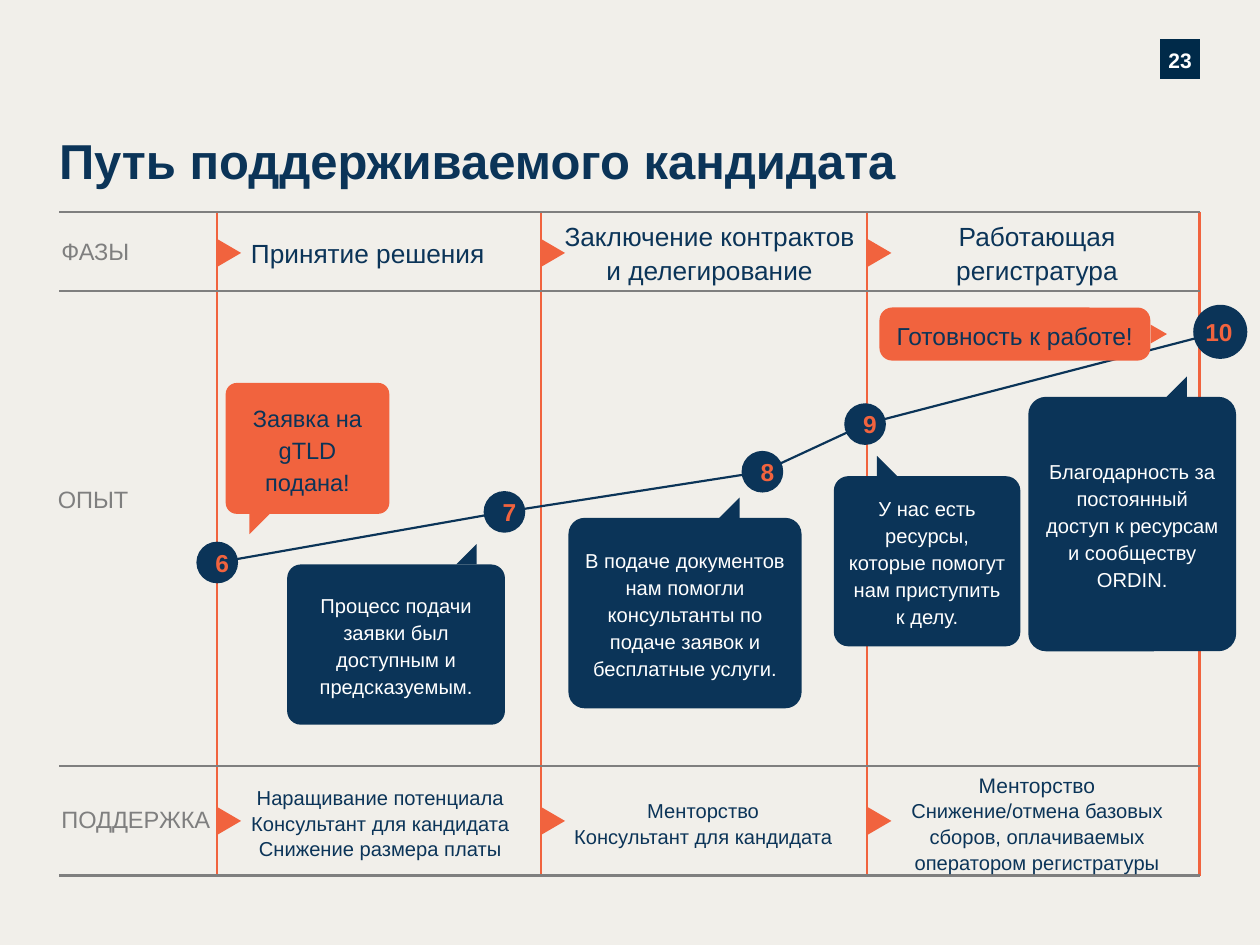
from itertools import pairwise

from lxml import etree
from pptx import Presentation
from pptx.dml.color import RGBColor
from pptx.enum.shapes import MSO_CONNECTOR, MSO_SHAPE
from pptx.enum.text import MSO_ANCHOR, MSO_AUTO_SIZE, PP_ALIGN
from pptx.oxml.ns import qn
from pptx.util import Cm, Pt

LINE = MSO_CONNECTOR.STRAIGHT
RECT, ROUND, OVAL = MSO_SHAPE.RECTANGLE, MSO_SHAPE.ROUNDED_RECTANGLE, MSO_SHAPE.OVAL
TRIANGLE, CORNER = MSO_SHAPE.ISOSCELES_TRIANGLE, MSO_SHAPE.RIGHT_TRIANGLE
TOP, MIDDLE = MSO_ANCHOR.TOP, MSO_ANCHOR.MIDDLE
LEFT, CENTER = PP_ALIGN.LEFT, PP_ALIGN.CENTER

COLORS = {"bg": "F1EFEA", "navy": "0B3458", "dark": "002A49", "orange": "F1633E",
          "gray": "7F7F7F", "white": "FFFFFF"}

TITLE = "Путь поддерживаемого кандидата"
PAGE = "23"
COLUMNS = [4.37, 10.9, 17.48, 24.18]
ROWS = [4.27, 5.87, 15.44, 17.65]
GRID_LEFT, GRID_RIGHT = 1.19, 24.2
ARROW_ROWS = [5.1, 16.55]

ROW_LABELS = [("ФАЗЫ", 1.24, 4.78), ("ОПЫТ", 1.17, 9.78), ("ПОДДЕРЖКА", 1.24, 16.23)]
PHASES = [("Принятие решения", 4.34),
          ("Заключение контрактов и делегирование", 11.23),
          ("Работающая регистратура", 17.83)]
SUPPORT = [
    (["Наращивание потенциала\vКонсультант для кандидата\vСнижение размера платы"],
     4.24, (0.3, 0, 0, 0), [11.5]),
    (["Менторство\vКонсультант для кандидата"], 10.9, (0.25, 0.13, 0.25, 0.13), [11.5]),
    (["Менторство", "Снижение/отмена базовых сборов, оплачиваемых оператором регистратуры"],
     17.63, (0.25, 0.13, 0.25, 0.13), [12, 11.5]),
]
STEPS = [("6", 4.38, 11.34, 0.84), ("7", 10.17, 10.32, 0.84), ("8", 15.37, 9.51, 0.84),
         ("9", 17.44, 8.55, 0.84), ("10", 24.6, 6.69, 1.09)]
MILESTONE = ("Заявка на gTLD подана!", (4.55, 7.72, 3.3, 2.64), 5.03)
READY = ("Готовность к работе!", (17.73, 6.2, 5.46, 1.07))
QUOTES = [
    ("Процесс подачи заявки был доступным и предсказуемым.",
     (5.79, 11.38, 4.39, 3.23), 9.2, "flipH"),
    ("В подаче документов нам помогли консультанты по подаче заявок и бесплатные услуги.",
     (11.46, 10.44, 4.7, 3.84), 14.5, "flipH"),
    ("У нас есть ресурсы, которые помогут нам приступить к делу.",
     (16.81, 9.6, 3.76, 3.43), 17.68, None),
    ("Благодарность за постоянный доступ к ресурсам и сообществу ORDIN.",
     (20.73, 8, 4.19, 5.13), 23.52, "flipH"),
]
TAIL = 0.41
BUBBLE_INSETS = (0.2, 0.1, 0.2, 0.1)


def rgb(name):
    return RGBColor.from_string(COLORS[name])


def write(sp, paragraphs, sizes, color, bold=False, align=CENTER, spacing=1.0,
          insets=(0, 0, 0, 0), anchor=MIDDLE):
    tf = sp.text_frame
    frame = {"word_wrap": True, "auto_size": MSO_AUTO_SIZE.NONE, "vertical_anchor": anchor}
    sides = ("margin_left", "margin_top", "margin_right", "margin_bottom")
    frame.update(zip(sides, map(Cm, insets)))
    for name, value in frame.items():
        setattr(tf, name, value)
    for i, (text, size) in enumerate(zip(paragraphs, sizes)):
        p = tf.add_paragraph() if i else tf.paragraphs[0]
        p.text = text
        p.alignment, p.line_spacing = align, spacing
        for r in p.runs:
            for name, value in {"name": "Arial", "size": Pt(size), "bold": bold}.items():
                setattr(r.font, name, value)
            r.font.color.rgb = rgb(color)


def add_shape(kind, box, color, rotation=0, flip=None):
    sp = s.shapes.add_shape(kind, *map(Cm, box))
    sp.shadow.inherit = False
    sp.fill.solid()
    sp.fill.fore_color.rgb = rgb(color)
    sp.line.fill.background()
    sp.rotation = rotation
    if flip:
        sp.element.spPr.find(qn("a:xfrm")).set(flip, "1")
    return sp


def add_text(box, paragraphs, sizes, color, **style):
    sp = s.shapes.add_textbox(*map(Cm, box))
    write(sp, paragraphs, sizes, color, **style)
    return sp


def add_line(x1, y1, x2, y2, color):
    line = s.shapes.add_connector(LINE, *map(Cm, (x1, y1, x2, y2)))
    line.line.color.rgb = rgb(color)
    line.line.width = Pt(1.25)
    etree.SubElement(line.element.spPr, qn("a:effectLst"))


def add_arrow(x, y, width, height):
    add_shape(TRIANGLE, (x - width / 2, y - height / 2, width, height), "orange", 90)


def add_bubble(text, box, fill, color, size, corner=0.085):
    sp = add_shape(ROUND, box, fill)
    sp.adjustments[0] = corner
    write(sp, [text], [size], color, spacing=1.12, insets=BUBBLE_INSETS)


prs = Presentation()
prs.slide_width, prs.slide_height = Cm(25.4), Cm(19.05)
s = prs.slides.add_slide(prs.slide_layouts[5])
s.background.fill.solid()
s.background.fill.fore_color.rgb = rgb("bg")

title = s.shapes.title
title_box = {"left": 1.19, "top": 2.49, "width": 19.05, "height": 1.47}
for name, value in title_box.items():
    setattr(title, name, Cm(value))
write(title, [TITLE], [28], "navy", bold=True, align=LEFT)
page = add_shape(RECT, (23.39, 0.79, 0.8, 0.8), "dark")
write(page, [PAGE], [12], "white", bold=True, spacing=1.08)

for x in COLUMNS:
    add_line(x, ROWS[0], x, ROWS[-1], "orange")
for y in ROWS:
    add_line(GRID_LEFT, y, GRID_RIGHT, y, "gray")
for x in COLUMNS[:-1]:
    for y in ARROW_ROWS:
        add_arrow(x + 0.25, y, 0.56, 0.48)

for text, x, y in ROW_LABELS:
    add_text((x, y, 3.12, 0.61), [text], [13.5], "gray", align=LEFT, anchor=TOP)
for text, x in PHASES:
    add_text((x, 4.5, 6.15, 1.17), [text], [15], "navy", spacing=1.06)
cells = [add_text((x, 15.6, 6.55, 1.96), paragraphs, sizes, "navy", spacing=1.06, insets=insets)
         for paragraphs, x, insets, sizes in SUPPORT]
first = cells[0].text_frame.paragraphs[0]
first._p.get_or_add_pPr().set("indent", str(Cm(-1.2)))

for (_, x1, y1, _), (_, x2, y2, _) in pairwise(STEPS):
    add_line(x1, y1, x2, y2, "navy")
for text, x, y, size in STEPS:
    circle = add_shape(OVAL, (x - size / 2, y - size / 2, size, size), "navy")
    insets = (0.2, 0, 0, 0) if len(text) == 1 else (0, 0, 0.05, 0)
    write(circle, [text], [14], "orange", bold=True, insets=insets)

text, box, tail_x = MILESTONE
add_bubble(text, box, "orange", "navy", 13.5)
add_shape(CORNER, (tail_x, box[1] + box[3], TAIL, TAIL), "orange", flip="flipV")

for text, box, tail_x, flip in QUOTES:
    add_bubble(text, box, "navy", "white", 11.5)
    add_shape(CORNER, (tail_x, box[1] - TAIL, TAIL, TAIL), "navy", flip=flip)

text, box = READY
add_bubble(text, box, "orange", "navy", 14, corner=0.239)
add_arrow(box[0] + box[2] + 0.17, box[1] + box[3] / 2, 0.38, 0.33)

prs.save("out.pptx")
